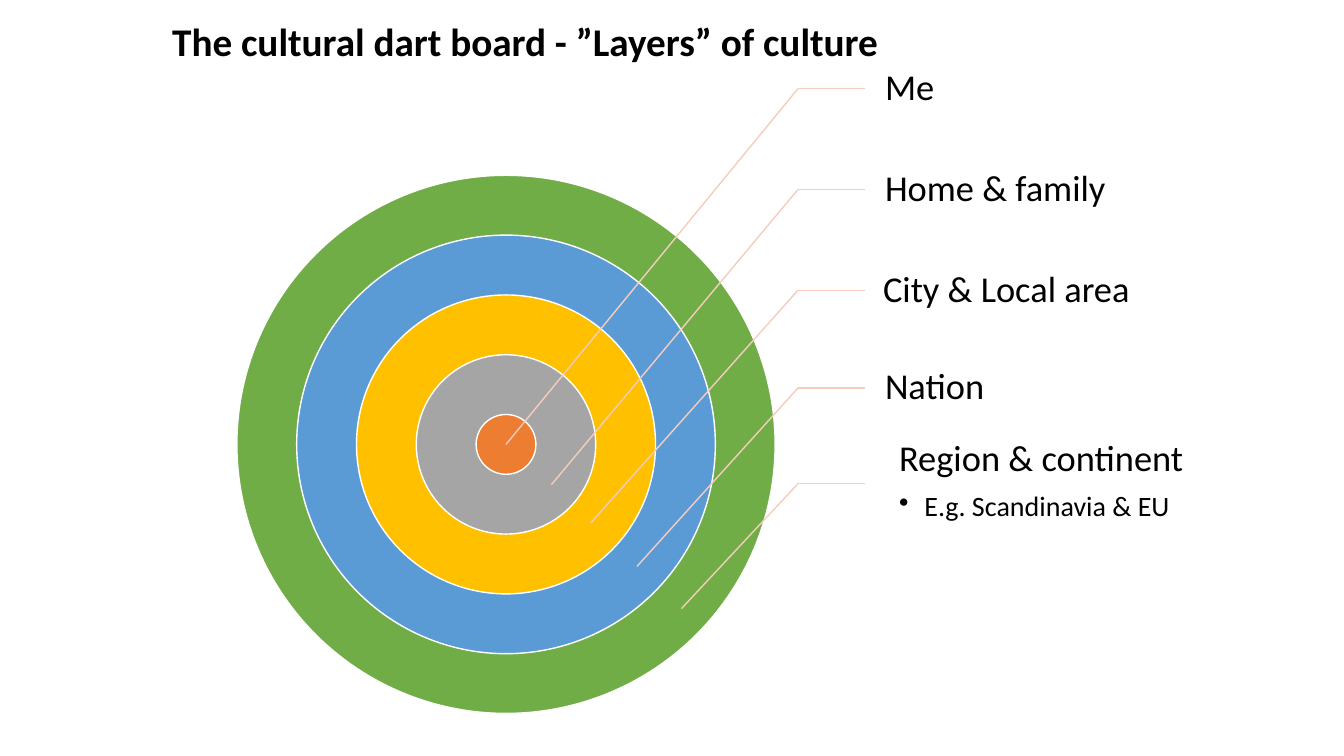
from lxml import etree
from pptx import Presentation
from pptx.dml.color import RGBColor
from pptx.enum.shapes import MSO_CONNECTOR, MSO_SHAPE
from pptx.enum.text import MSO_ANCHOR, MSO_AUTO_SIZE
from pptx.oxml.ns import qn
from pptx.util import Inches, Pt

OVAL, STRAIGHT = MSO_SHAPE.OVAL, MSO_CONNECTOR.STRAIGHT
TOP, MIDDLE = MSO_ANCHOR.TOP, MSO_ANCHOR.MIDDLE
FIT_SHAPE = MSO_AUTO_SIZE.SHAPE_TO_FIT_TEXT

COLORS = {
    "text": "000000", "edge": "FFFFFF", "leader": "F6CCBE",
    "region": "70AD47", "nation": "5B9BD5", "city": "FFC000",
    "home": "A5A5A5", "me": "ED7D31",
}
COLS = 40  # square grid cells across the slide


class Board:
    """Style and drawing methods; all lengths are in grid cells."""
    font = "Calibri"

    def __init__(self, prs):
        self.slide = prs.slides.add_slide(prs.slide_layouts[6])
        self.cell = prs.slide_width / COLS

    def grid(self, *cells):
        return [round(c * self.cell) for c in cells]

    def color(self, name):
        return RGBColor.from_string(COLORS[name])

    def ring(self, center, radius, fill):
        x, y = center
        sp = self.slide.shapes.add_shape(
            OVAL, *self.grid(x - radius, y - radius, 2 * radius, 2 * radius))
        sp.shadow.inherit = False
        sp.fill.solid()
        sp.fill.fore_color.rgb = self.color(fill)
        sp.line.color.rgb = self.color("edge")
        sp.line.width = Pt(1)

    def line(self, start, end):
        ln = self.slide.shapes.add_connector(STRAIGHT, *self.grid(*start, *end))
        ln.line.color.rgb = self.color("leader")
        ln.line.width = Pt(1)
        etree.SubElement(ln._element.spPr, qn("a:effectLst"))

    def box(self, x, y, w, h, anchor=TOP, wrap=True):
        tf = self.slide.shapes.add_textbox(*self.grid(x, y, w, h)).text_frame
        tf.word_wrap = wrap
        tf.vertical_anchor = anchor
        return tf

    def run(self, p, text, size, bold=False):
        r = p.add_run()
        r.text = text
        r.font.name = self.font
        r.font.size = Pt(size)
        r.font.bold = bold
        r.font.color.rgb = self.color("text")

    def label(self, x, y, w, h, text, detail=None):
        tf = self.box(x, y, w, h, TOP if detail else MIDDLE)
        tf.margin_left = Inches(0.2)
        tf.margin_top = tf.margin_right = tf.margin_bottom = Inches(0.04)
        p = tf.paragraphs[0]
        p.line_spacing, p.space_after = 0.9, Pt(9.1)
        self.run(p, text, 26)
        if detail:
            p = tf.add_paragraph()
            p.level = 1
            p.line_spacing, p.space_after = 0.9, Pt(3)
            self.bullet(p)
            self.run(p, detail, 20)

    def bullet(self, p):
        pPr = p._p.get_or_add_pPr()
        pPr.set("marL", str(Inches(0.25)))
        pPr.set("indent", str(Inches(-0.25)))
        etree.SubElement(pPr, qn("a:buChar"), char="•")

    def title(self, x, y, w, h, text):
        tf = self.box(x, y, w, h, wrap=False)
        tf.auto_size = FIT_SHAPE
        self.run(tf.paragraphs[0], text, 28, bold=True)


def main():
    prs = Presentation()
    prs.slide_width, prs.slide_height = Inches(13.33), Inches(7.5)
    board = Board(prs)

    # Dart board, outermost ring first
    center, bull_radius = (15.06, 13.23), 0.89
    rings = ("region", "nation", "city", "home", "me")
    for i, ring in enumerate(rings):
        board.ring(center, bull_radius * (9 - 2 * i), ring)

    # Labels with leader lines: text, detail, left, width, leader y, tip
    layers = [
        ("Me", None, 25.74, 8.01, 2.64, center),
        ("Home & family", None, 25.74, 8.01, 5.64, (16.41, 14.43)),
        ("City & Local area", None, 25.68, 10.86, 8.64, (17.58, 15.57)),
        ("Nation", None, 25.74, 8.01, 11.55, (18.96, 16.86)),
        ("Region & continent", "E.g. Scandinavia & EU",
         26.16, 11.31, 14.4, (20.28, 18.12)),
    ]
    elbow_x, leader_end, label_h = 23.75, 25.74, 2.82
    for text, detail, x, w, y, tip in layers:
        board.label(x, y - label_h / 2, w, label_h, text, detail)
        board.line((elbow_x, y), (leader_end, y))
        board.line((elbow_x, y), tip)

    # Title
    board.title(4.83, 0.36, 21.87, 1.71,
                "The cultural dart board - ”Layers” of culture")
    prs.save("out.pptx")


if __name__ == "__main__":
    main()
